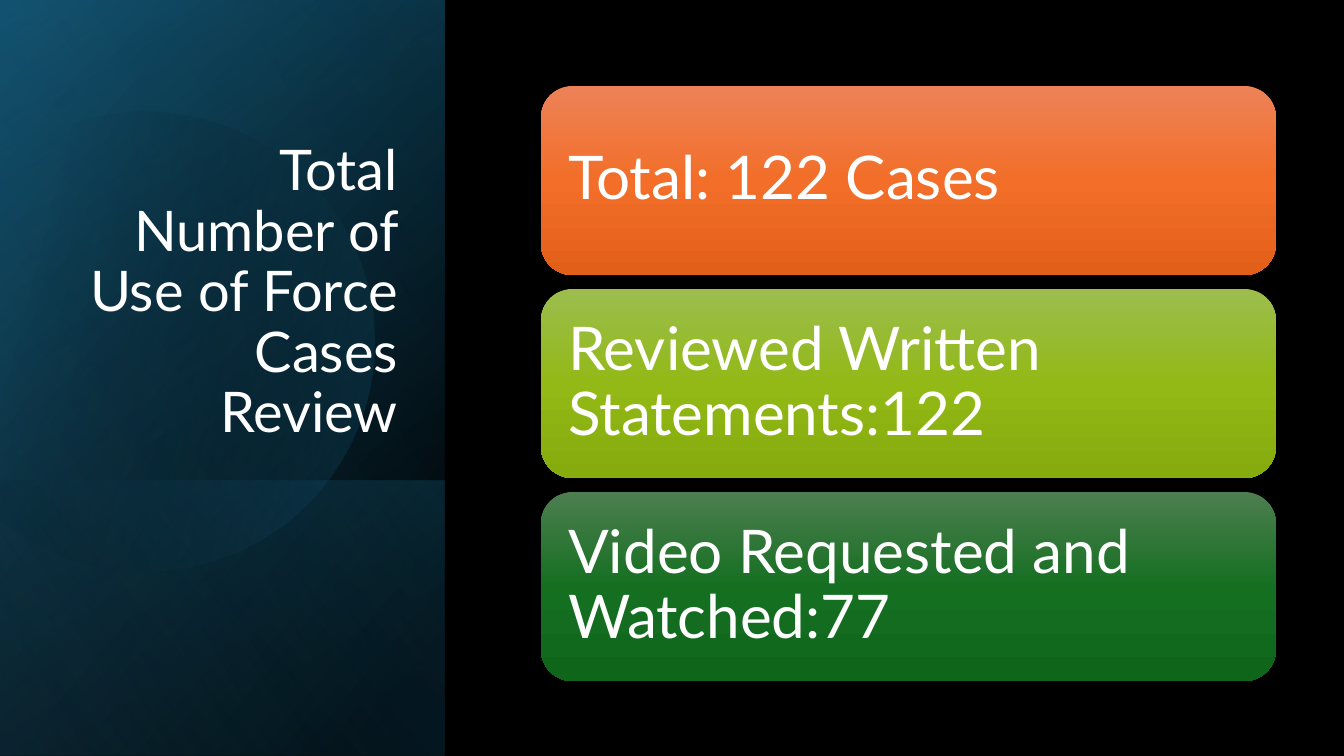
from math import cos, radians, sin

from lxml.etree import SubElement
from pptx import Presentation
from pptx.dml.color import RGBColor
from pptx.enum.shapes import MSO_SHAPE
from pptx.enum.text import MSO_ANCHOR, MSO_AUTO_SIZE, PP_ALIGN
from pptx.oxml.ns import qn
from pptx.util import Pt

PX = 914400 / 100.8  # EMU in one pixel

THEME = {
    "font": "Lato",
    "text": "FFFFFF",
    "black": "000000",
    "navy": "104862",
    "teal": "156082",
    "sky": "46B1E1",
    "orange": ("ED8257", "F26E29", "E25F1A"),
    "lime": ("9CBD4E", "92B916", "85AB0D"),
    "green": ("4D7E50", "156F21", "0F661B"),
    "title_size": 40,
    "card_size": 43,
}


def paint(shape, stops, angle):
    """Gradient fill; each stop is position, colour and opacity in percent."""
    shape.shadow.inherit = False
    shape.line.fill.background()
    shape.fill.gradient()
    grad = shape._element.spPr.find(qn("a:gradFill"))
    for child in list(grad):
        grad.remove(child)
    stop_list = SubElement(grad, qn("a:gsLst"))
    for position, color, opacity in stops:
        stop = SubElement(stop_list, qn("a:gs"), pos=str(position * 1000))
        rgb = SubElement(stop, qn("a:srgbClr"), val=color)
        if opacity < 100:
            SubElement(rgb, qn("a:alpha"), val=str(opacity * 1000))
    SubElement(grad, qn("a:lin"), ang=str(angle * 60000), scaled="0")


def write(shape, text, size, align=PP_ALIGN.LEFT, anchor=MSO_ANCHOR.MIDDLE, inset=None):
    frame = shape.text_frame
    frame.word_wrap = True
    frame.auto_size = MSO_AUTO_SIZE.NONE
    frame.vertical_anchor = anchor
    if inset is not None:
        frame.margin_left = frame.margin_right = round(inset * PX)
        frame.margin_top = frame.margin_bottom = round(inset * PX)
    paragraph = frame.paragraphs[0]
    paragraph.alignment = align
    paragraph.line_spacing = 0.9
    run = paragraph.add_run()
    run.text = text
    run.font.name = THEME["font"]
    run.font.size = Pt(size)
    run.font.color.rgb = RGBColor.from_string(THEME["text"])


deck = Presentation()
deck.slide_width, deck.slide_height = round(1344 * PX), round(756 * PX)
slide = deck.slides.add_slide(deck.slide_layouts[5])
shapes = slide.shapes
slide.background.fill.solid()
slide.background.fill.fore_color.rgb = RGBColor.from_string(THEME["black"])

# Left panel: quarter-turned gradient layers with a faint disc among them
black, navy, teal, sky = (THEME[key] for key in ("black", "navy", "teal", "sky"))
full, strip, disc = (-156, 155, 756, 445), (84, 396, 276, 445), None
panel_layers = [
    (full, [(8, black, 100), (100, navy, 100)], 50),
    (full, [(0, black, 0), (99, teal, 46)], 30),
    (strip, [(2, teal, 29), (100, black, 30)], 130),
    (disc, [(29, black, 0), (100, teal, 43)], 30),
    (full, [(0, black, 0), (99, sky, 11)], 120),
]
for box, stops, angle in panel_layers:
    if box is disc:
        # Circle round (144, 337), cut off by a chord: corners first, then one arc
        radius, start, end = 230, -118, 150
        rim = [(144 + radius * cos(radians(a)), 337 + radius * sin(radians(a)))
               for a in (start, -90, 0, 90, end)]
        outline = shapes.build_freeform(*rim[0], scale=PX)
        outline.add_line_segments(rim[1:], close=True)
        layer = outline.convert_to_shape()
        sides = list(layer._element.iter(qn("a:lnTo")))
        contour = sides[0].getparent()
        arc = SubElement(contour, qn("a:arcTo"), wR=str(radius), hR=str(radius),
                         stAng=str((start + 360) * 60000), swAng=str((end - start) * 60000))
        sides[0].addprevious(arc)
        for side in sides:
            contour.remove(side)
        layer.rotation = 343.9
    else:
        layer = shapes.add_shape(MSO_SHAPE.RECTANGLE, *(round(v * PX) for v in box))
        layer.rotation = 90
        layer._element.spPr.find(qn("a:xfrm")).set("flipH", "1")
    paint(layer, stops, angle)

# Title, brought in front of the panel
title = shapes.title
title.left, title.top, title.width, title.height = (
    round(v * PX) for v in (64, 186, 344, 264))
write(title, "Total Number of Use of Force Cases Review", THEME["title_size"],
      align=PP_ALIGN.RIGHT, anchor=MSO_ANCHOR.BOTTOM)
shapes._spTree.append(title._element)

# Case count cards
cards = [
    ("Total: 122 Cases", "orange"),
    ("Reviewed Written Statements:122", "lime"),
    ("Video Requested and Watched:77", "green"),
]
for row, (count, hue) in enumerate(cards):
    card_box = (541, 86 + 203 * row, 735, 189)
    card = shapes.add_shape(MSO_SHAPE.ROUNDED_RECTANGLE, *(round(v * PX) for v in card_box))
    paint(card, [(50 * i, color, 100) for i, color in enumerate(THEME[hue])], 90)
    write(card, count, THEME["card_size"], inset=18)

deck.save("out.pptx")
